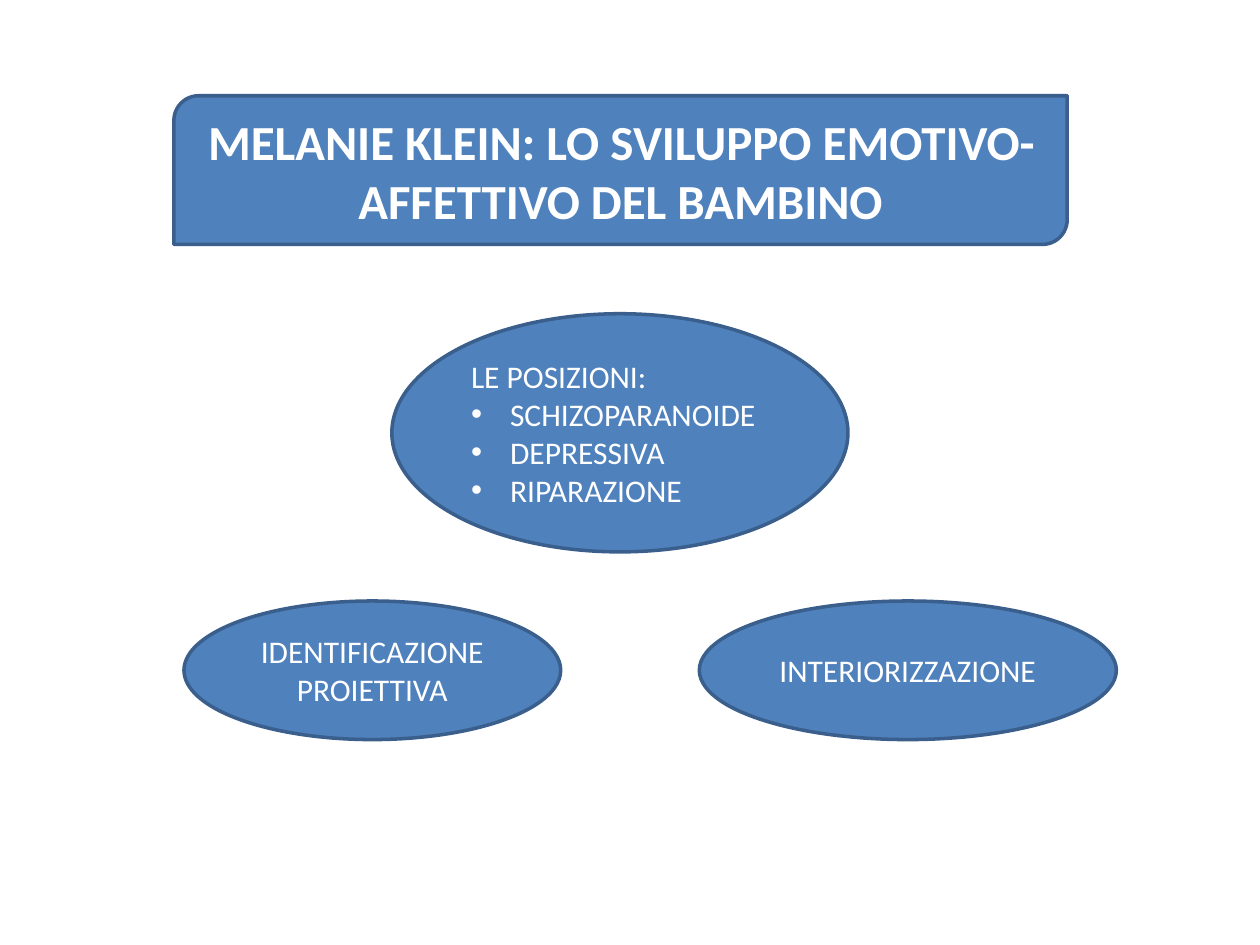
from lxml import etree
from pptx import Presentation
from pptx import util as u
from pptx.dml.color import RGBColor
from pptx.enum import shapes, text
from pptx.oxml.ns import qn

COLORS = {"fill": "4F81BD", "line": "3A5F8C", "text": "FFFFFF"}
FONT = "Calibri"
INDENT = u.Inches(0.31)


def color(name):
    return RGBColor.from_string(COLORS[name])


def add_block(s, kind, left, top, width, height):
    """Add a filled, outlined shape and return its text frame."""
    sp = s.shapes.add_shape(kind, *(u.Inches(v) for v in (left, top, width, height)))
    sp.shadow.inherit = False
    sp.fill.solid()
    sp.fill.fore_color.rgb = color("fill")
    sp.line.color.rgb = color("line")
    sp.line.width = u.Pt(2)
    tf = sp.text_frame
    tf.word_wrap = True
    tf.vertical_anchor = text.MSO_ANCHOR.MIDDLE
    return tf


def write(p, words, size=18, bold=False, align=text.PP_ALIGN.CENTER):
    p.alignment = align
    r = p.add_run()
    r.text = words
    r.font.name = FONT
    r.font.size = u.Pt(size)
    r.font.bold = bold
    r.font.color.rgb = color("text")


def set_bullet(p):
    pPr = p._p.get_or_add_pPr()
    pPr.set("marL", str(INDENT))
    pPr.set("indent", str(-INDENT))
    etree.SubElement(pPr, qn("a:buFont")).set("typeface", "Arial")
    etree.SubElement(pPr, qn("a:buChar")).set("char", "•")


def add_title(s, words):
    tf = add_block(s, shapes.MSO_SHAPE.ROUND_2_DIAG_RECTANGLE, 1.38, 0.76, 7.09, 1.18)
    write(tf.paragraphs[0], words, size=28, bold=True)


def add_concept(s, words, left, width):
    tf = add_block(s, shapes.MSO_SHAPE.OVAL, left, 4.77, width, 1.1)
    write(tf.paragraphs[0], words)


def add_positions(s, heading, items):
    tf = add_block(s, shapes.MSO_SHAPE.OVAL, 3.11, 2.49, 3.62, 1.89)
    write(tf.paragraphs[0], heading, align=text.PP_ALIGN.LEFT)
    for item in items:
        p = tf.add_paragraph()
        set_bullet(p)
        write(p, item, align=text.PP_ALIGN.LEFT)


def main():
    prs = Presentation()
    prs.slide_width, prs.slide_height = u.Inches(10), u.Inches(7.5)
    s = prs.slides.add_slide(prs.slide_layouts[6])

    # Title banner
    add_title(s, "MELANIE KLEIN: LO SVILUPPO EMOTIVO-AFFETTIVO DEL BAMBINO")

    # Lower pair of concepts
    add_concept(s, "INTERIORIZZAZIONE", 5.55, 3.31)
    add_concept(s, "IDENTIFICAZIONE PROIETTIVA", 1.46, 2.99)

    # Central list of positions
    add_positions(s, "LE POSIZIONI:", ["SCHIZOPARANOIDE", "DEPRESSIVA", "RIPARAZIONE"])

    prs.save("out.pptx")


if __name__ == "__main__":
    main()
